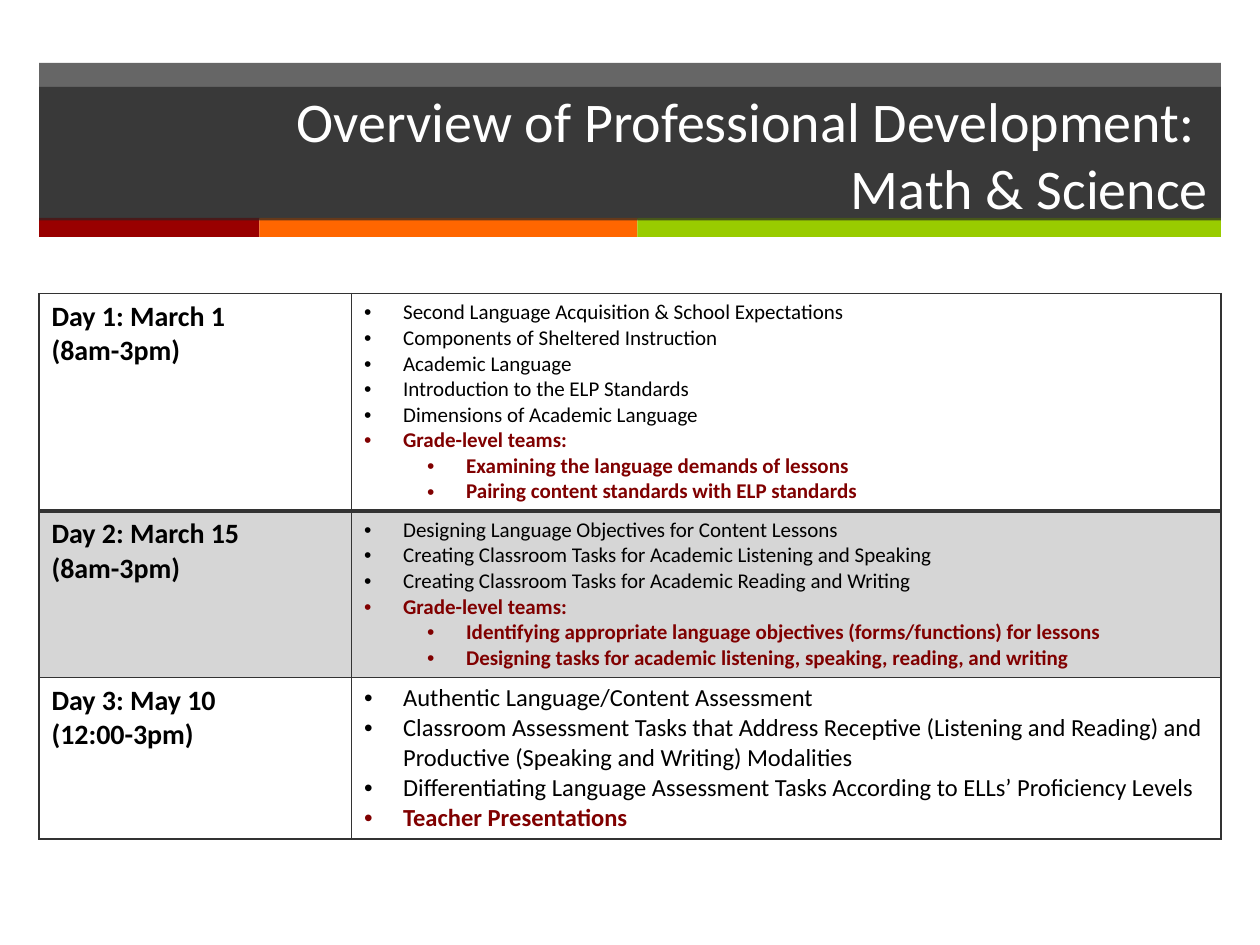
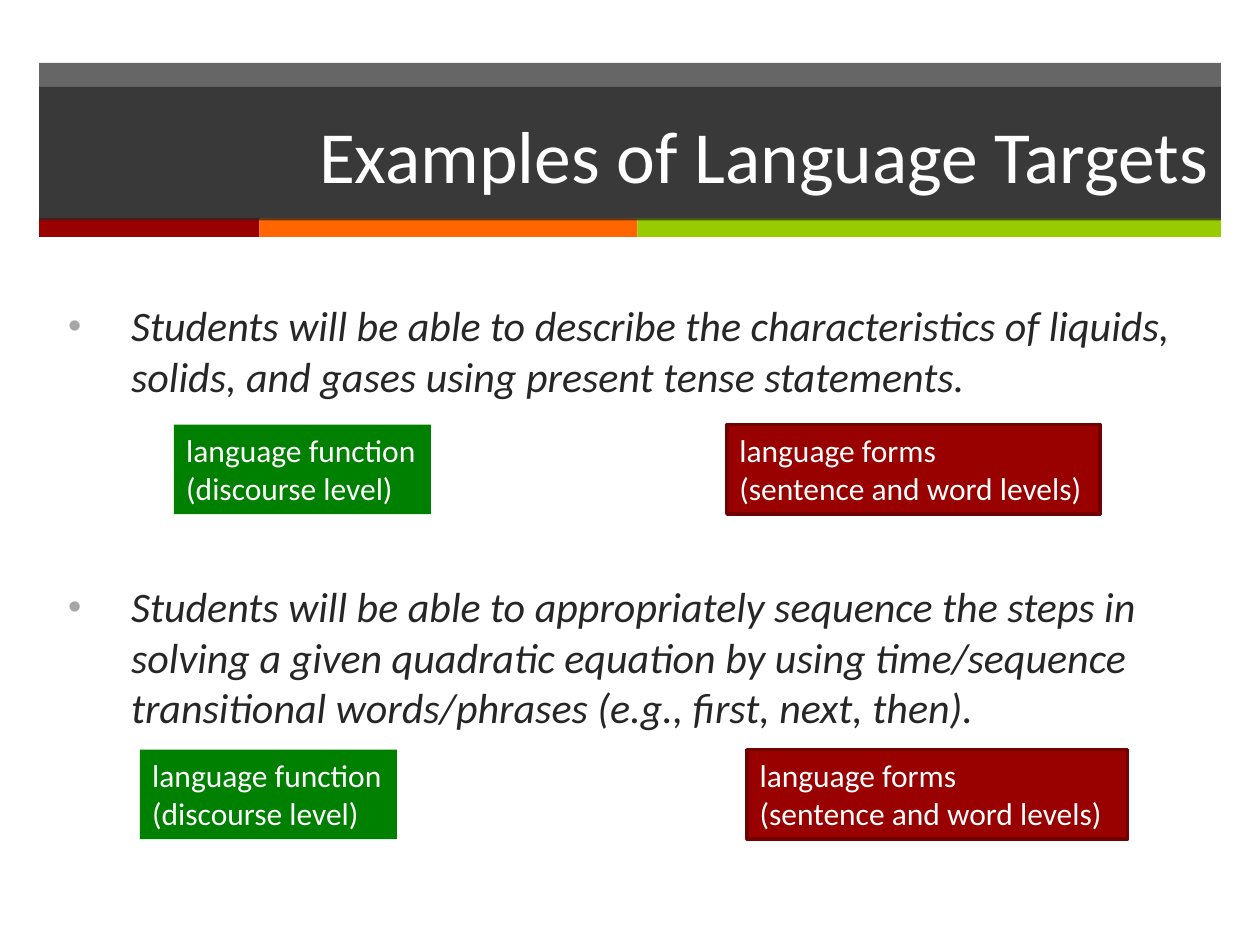
from lxml.etree import SubElement
from pptx import Presentation
from pptx.dml.color import RGBColor
from pptx.enum.shapes import MSO_SHAPE as Preset
from pptx.enum.text import MSO_ANCHOR as Anchor, MSO_AUTO_SIZE as AutoSize, PP_ALIGN as Align
from pptx.oxml import parse_xml
from pptx.oxml.ns import nsdecls, qn
from pptx.util import Inches, Pt

FONT = "Calibri"
WHITE, BLACK, CHARCOAL, RULE = "FFFFFF", "000000", "262626", "333333"
RED, ORANGE, LIME, GREEN, MAROON = "990000", "FF6600", "99CC00", "008000", "800000"
LEFT, WIDTH = 0.31, 9.38
CONTENT_TOP = 2.33


def paint(fill, colour, opacity=100):
    fill.solid()
    fill.fore_color.rgb = RGBColor.from_string(colour)
    if opacity < 100:
        tint = fill._xPr.find(".//" + qn("a:srgbClr"))
        SubElement(tint, qn("a:alpha"), val=str(opacity * 1000))


def style(paragraph, size, colour, bold=False, italic=False, indent=None, hang=0.31, bullet_xml=""):
    for run in paragraph.runs:
        run.font.name, run.font.size = FONT, Pt(size)
        run.font.bold, run.font.italic = bold, italic
        paint(run.font.fill, colour)
    if indent is not None:
        props = paragraph._p.get_or_add_pPr()
        props.set("marL", str(Inches(indent)))
        props.set("indent", str(-Inches(hang)))
        marks = parse_xml(f'<a:pPr {nsdecls("a")}>{bullet_xml}'
                          '<a:buFont typeface="Arial"/><a:buChar char="•"/></a:pPr>')
        props.extend(list(marks))


prs = Presentation()
prs.slide_width, prs.slide_height = Inches(10), Inches(7.5)
overview = prs.slides.add_slide(prs.slide_layouts[5])
targets = prs.slides.add_slide(prs.slide_layouts[1])

# Shared header: translucent band, colour strip and title
header_bands = [(LEFT, 0.5, WIDTH, 1.24, CHARCOAL, 70)]
strip_left = LEFT
for strip_width, strip_colour in [(1.75, RED), (3, ORANGE), (4.63, LIME)]:
    header_bands.append((strip_left, 1.73, strip_width, 0.15, strip_colour, 100))
    strip_left += strip_width

for slide, heading, heading_size in [
    (overview, "Overview of Professional Development: \vMath & Science", 32),
    (targets, "Examples of Language Targets", 42),
]:
    title = slide.shapes.title
    for left, top, width, height, colour, opacity in header_bands:
        band = slide.shapes.add_shape(Preset.RECTANGLE, Inches(left), Inches(top),
                                      Inches(width), Inches(height))
        band.shadow.inherit = False
        band.line.fill.background()
        paint(band.fill, colour, opacity)
        title.element.addprevious(band.element)
    title.left, title.top = Inches(LEFT), Inches(0.69)
    title.width, title.height = Inches(WIDTH), Inches(1.06)
    paint(title.fill, CHARCOAL, 70)
    title.text_frame.text = heading
    title.text_frame.auto_size = AutoSize.NONE
    title.text_frame.vertical_anchor = Anchor.MIDDLE
    title.text_frame.paragraphs[0].alignment = Align.RIGHT
    style(title.text_frame.paragraphs[0], heading_size, WHITE)

# Schedule: day, row height, topic size, topics, team topic, team tasks
days = [
    ("Day 1: March 1 (8am-3pm)", 1.72, 12,
     ["Second Language Acquisition & School Expectations",
      "Components of Sheltered Instruction",
      "Academic Language",
      "Introduction to the ELP Standards",
      "Dimensions of Academic Language"],
     "Grade-level teams:",
     ["Examining the language demands of lessons",
      "Pairing content standards with ELP standards"]),
    ("Day 2: March 15 (8am-3pm)", 1.32, 12,
     ["Designing Language Objectives for Content Lessons",
      "Creating Classroom Tasks for Academic Listening and Speaking",
      "Creating Classroom Tasks for Academic Reading and Writing"],
     "Grade-level teams:",
     ["Identifying appropriate language objectives (forms/functions) for lessons",
      "Designing tasks for academic listening, speaking, reading, and writing"]),
    ("Day 3: May 10\n(12:00-3pm)", 1.28, 14,
     ["Authentic Language/Content Assessment",
      "Classroom Assessment Tasks that Address Receptive (Listening and Reading) "
      "and Productive (Speaking and Writing) Modalities",
      "Differentiating Language Assessment Tasks According to ELLs’ Proficiency Levels"],
     "Teacher Presentations", []),
]
schedule = overview.shapes.add_table(
    len(days), 2, Inches(LEFT), Inches(CONTENT_TOP), Inches(WIDTH),
    Inches(sum(day[1] for day in days))).table
schedule.first_row = schedule.horz_banding = False
schedule.columns[0].width, schedule.columns[1].width = Inches(2.48), Inches(6.9)

for row, (date, height, size, topics, team_topic, tasks) in enumerate(days):
    schedule.rows[row].height = Inches(height)
    date_cell, topic_cell = schedule.cell(row, 0), schedule.cell(row, 1)
    date_cell.text_frame.text = date
    for line in date_cell.text_frame.paragraphs:
        style(line, 16, BLACK, bold=True)

    topic_cell.text_frame.text = "\n".join([*topics, team_topic, *tasks])
    for i, line in enumerate(topic_cell.text_frame.paragraphs):
        for_team = i >= len(topics)
        line.level = int(i > len(topics))
        style(line, size, MAROON if for_team else BLACK, bold=for_team,
              indent=0.31 + 0.5 * line.level)

    # Fill and rules, with a heavier rule under the first day
    for cell in (date_cell, topic_cell):
        if row == 1:
            paint(cell.fill, RULE, 20)
        else:
            cell.fill.background()
        weights = {"lnL": 1, "lnR": 1, "lnT": 2 if row == 1 else 1, "lnB": 2 if row == 0 else 1}
        for place, (side, weight) in enumerate(weights.items()):
            cell._tc.get_or_add_tcPr().insert(place, parse_xml(
                f'<a:{side} {nsdecls("a")} w="{Pt(weight)}"><a:solidFill>'
                f'<a:srgbClr val="{RULE}"/></a:solidFill></a:{side}>'))

# Example targets
examples = targets.placeholders[1]
examples.left, examples.top = Inches(0.44), Inches(CONTENT_TOP)
examples.width, examples.height = Inches(9.25), Inches(4.6)
examples.text_frame.text = (
    "Students will be able to describe the characteristics of liquids, solids, and gases "
    "using present tense statements.\n"
    "Students will be able to appropriately sequence the steps in solving a given quadratic "
    "equation by using time/sequence transitional words/phrases (e.g., first, next, then).")
examples.text_frame.auto_size = AutoSize.NONE
grey_mark = '<a:buClr><a:srgbClr val="A6A6A6"/></a:buClr><a:buSzPct val="90000"/>'
for example, gap in zip(examples.text_frame.paragraphs, (20, 103)):
    example.space_before = Pt(gap)
    style(example, 24, CHARCOAL, italic=True, indent=0.5, hang=0.5, bullet_xml=grey_mark)

# Labels under each example
function_label = "language function\n(discourse level)"
forms_label = "language forms\n(sentence and word levels)"
for left, top, width, label, colour, edge in [
    (1.38, 3.37, 2.04, function_label, GREEN, None),
    (5.77, 3.37, 2.96, forms_label, RED, "710000"),
    (1.11, 5.95, 2.04, function_label, GREEN, None),
    (5.93, 5.95, 3.02, forms_label, RED, "710000"),
]:
    tag = targets.shapes.add_shape(Preset.RECTANGLE, Inches(left), Inches(top),
                                   Inches(width), Inches(0.71))
    tag.shadow.inherit = False
    paint(tag.fill, colour)
    if edge:
        paint(tag.line.fill, edge)
        tag.line.width = Pt(2)
    else:
        tag.line.fill.background()
    tag.text_frame.text = label
    tag.text_frame.word_wrap = True
    tag.text_frame.margin_right = 0
    tag.text_frame.vertical_anchor = Anchor.TOP
    for line in tag.text_frame.paragraphs:
        line.alignment = Align.LEFT
        style(line, 18, WHITE)

prs.save("out.pptx")
